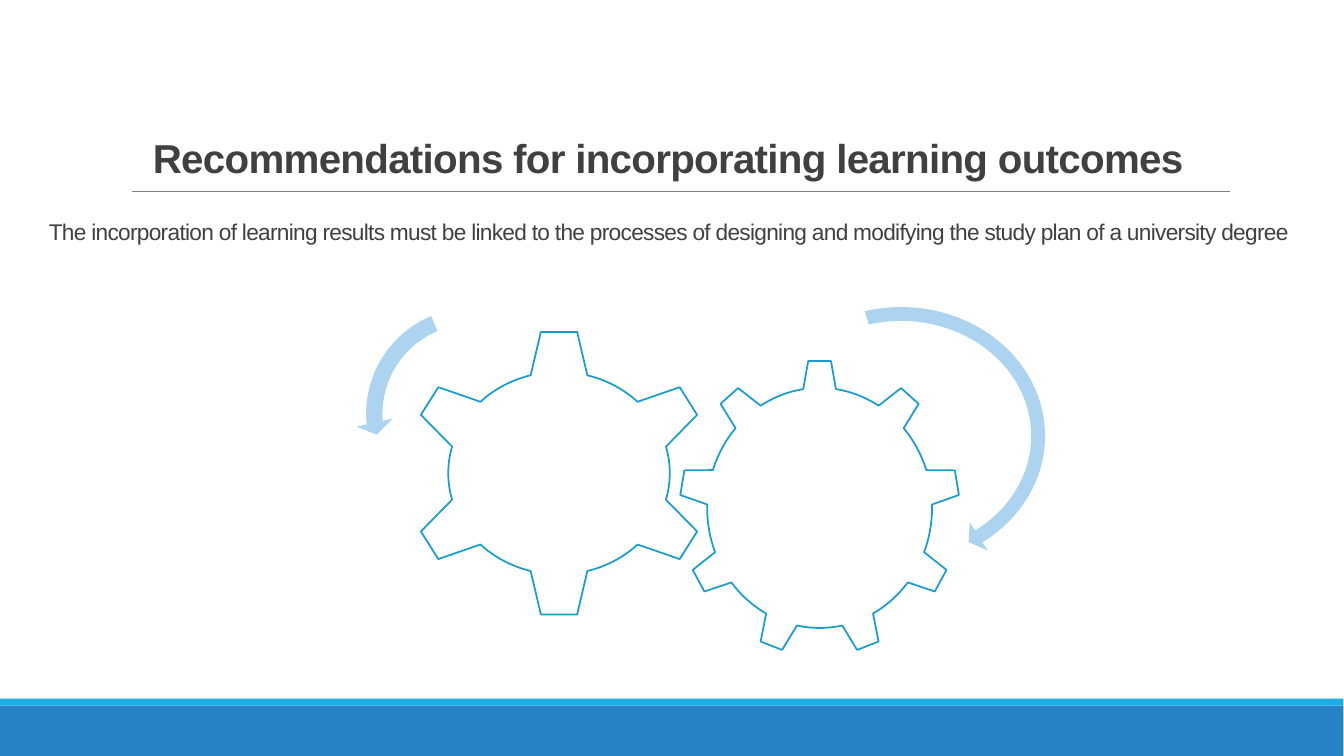
from lxml import etree
from pptx import Presentation
from pptx.dml.color import RGBColor
from pptx.enum import shapes, text
from pptx.oxml.ns import qn
from pptx.util import Pt

SLIDE_SIZE = (960.48, 540)
COLORS = {
    "white": "FFFFFF",
    "band": "2683C6",
    "stripe": "1CADE4",
    "rule": "808080",
    "text": "404040",
    "gear_line": "199DCF",
    "arrow": "ACD3EF",
}
SHAPE = shapes.MSO_SHAPE
BANDS = [
    ("band", (0, 504, 960, 36)),
    ("stripe", (0, 499, 960, 5)),
]
RULE = {"left": 94.3, "right": 879.1, "top": 136.8}
TEXT_LEFT, TEXT_WIDTH = 15.1, 924.5
HEADINGS = [
    ("Recommendations for incorporating learning outcomes",
     {"center": 112.6, "size": 28.8, "bold": True}),
    ("The incorporation of learning results must be linked to the processes of "
     "designing and modifying the study plan of a university degree",
     {"center": 165.4, "size": 16.2}),
]
GEARS = [
    (SHAPE.GEAR_9, (485.3, 257, 200.9, 211.7)),
    (SHAPE.GEAR_6, (289.4, 234.7, 220.3, 206.6)),
]
ARROWS = [
    (SHAPE.CIRCULAR_ARROW, (534.2, 212.4, 219.6, 198),
     (0.05, 3.13, 31.38, 152.27, 0.06)),
    (SHAPE.LEFT_CIRCULAR_ARROW, (254.2, 212.4, 166.3, 166.3),
     (0.07, 4.3, 104.89, 148.38, 0.08)),
]


def color(name):
    """Return the named colour."""
    return RGBColor.from_string(COLORS[name])


def add_figure(slide, kind, box, fill, line=None, adjustments=()):
    """Add a filled preset shape, outlined when a line colour is named."""
    shape = slide.shapes.add_shape(kind, *map(Pt, box))
    shape.shadow.inherit = False
    shape.fill.solid()
    shape.fill.fore_color.rgb = color(fill)
    if line:
        shape.line.color.rgb = color(line)
        shape.line.width = Pt(1.25)
    else:
        shape.line.fill.background()
    for index, value in enumerate(adjustments):
        shape.adjustments[index] = value


def add_rule(slide, left, right, top):
    """Add the thin horizontal rule below the title."""
    rule = slide.shapes.add_connector(
        shapes.MSO_CONNECTOR.STRAIGHT, Pt(left), Pt(top), Pt(right), Pt(top))
    rule.line.color.rgb = color("rule")
    rule.line.width = Pt(0.5)
    etree.SubElement(rule._element.spPr, qn("a:effectLst"))


def add_text(slide, words, center, size, bold=False):
    """Add one centred line of text around a vertical centre."""
    height = size * 1.5
    box = slide.shapes.add_textbox(
        Pt(TEXT_LEFT), Pt(center - height / 2), Pt(TEXT_WIDTH), Pt(height))
    frame = box.text_frame
    frame.word_wrap = True
    frame.vertical_anchor = text.MSO_ANCHOR.MIDDLE
    frame.margin_left = frame.margin_right = 0
    frame.margin_top = frame.margin_bottom = 0
    paragraph = frame.paragraphs[0]
    paragraph.alignment = text.PP_ALIGN.CENTER
    run = paragraph.add_run()
    run.text = words
    run.font.name = "Arial"
    run.font.size = Pt(size)
    run.font.bold = bold
    run.font.color.rgb = color("text")
    run._r.get_or_add_rPr().set("spc", "-50")


def main():
    """Build and save the slide."""
    presentation = Presentation()
    presentation.slide_width, presentation.slide_height = map(Pt, SLIDE_SIZE)
    slide = presentation.slides.add_slide(presentation.slide_layouts[6])
    for fill, box in BANDS:
        add_figure(slide, SHAPE.RECTANGLE, box, fill)
    add_rule(slide, **RULE)
    for words, style in HEADINGS:
        add_text(slide, words, **style)
    for kind, box in GEARS:
        add_figure(slide, kind, box, "white", line="gear_line")
    for kind, box, adjustments in ARROWS:
        add_figure(slide, kind, box, "arrow", adjustments=adjustments)
    presentation.save("out.pptx")


if __name__ == "__main__":
    main()
